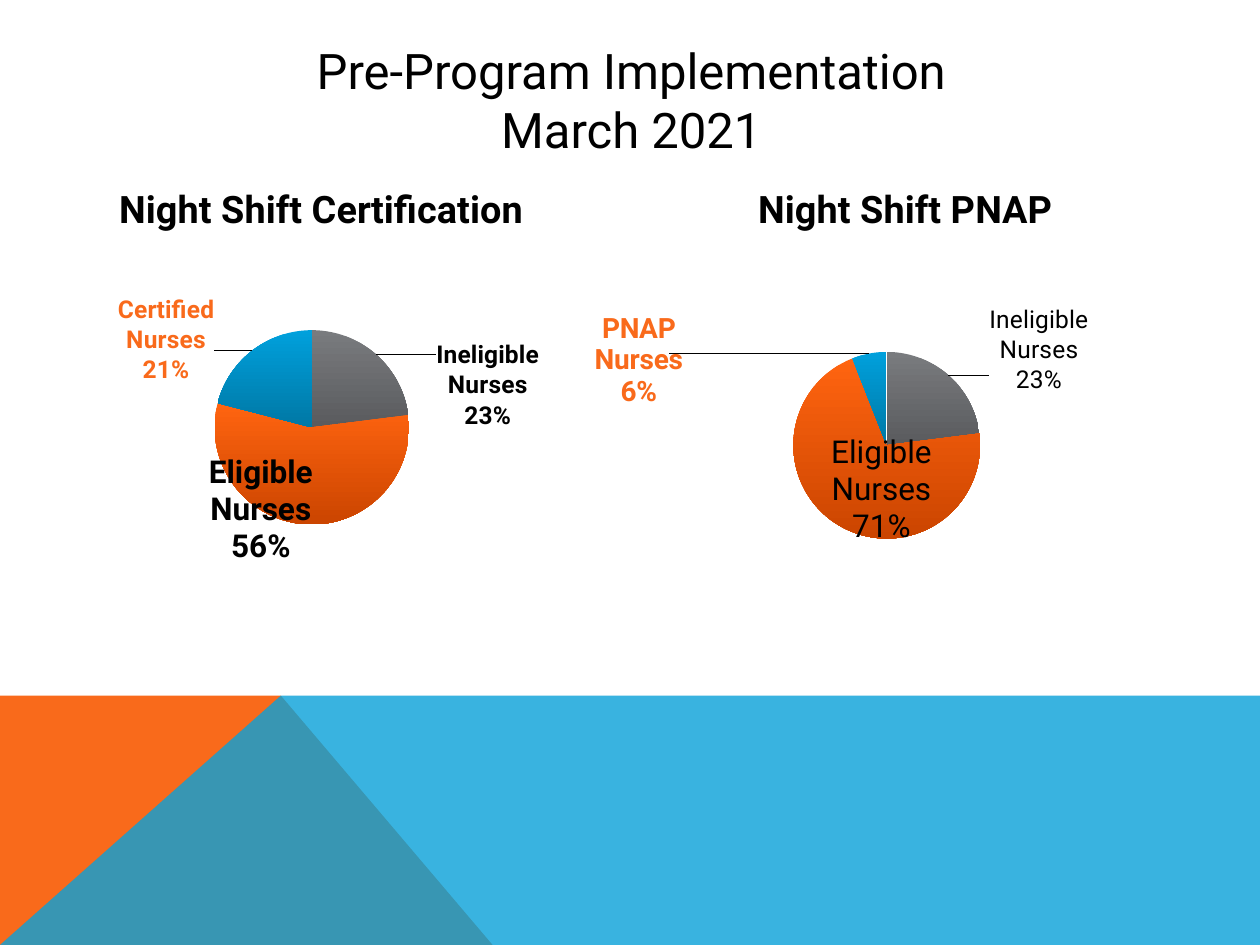
import pptx
import pptx.chart.data
import pptx.dml.color
import pptx.enum.chart
import pptx.enum.text
import pptx.oxml
import pptx.oxml.ns
import pptx.util

Pt = pptx.util.Pt
qn = pptx.oxml.ns.qn
FONT = "Roboto"
COLORS = {
    "text": "000000",
    "gray": "797B7E", "gray_dark": "5A5B5E",
    "orange": "F96A1B", "orange_light": "FF6410", "orange_dark": "CB4500",
    "blue": "08A1D9", "blue_light": "00A0DC", "blue_dark": "0078A5",
}
# Top and bottom colour of each slice
SLICES = [("gray", "gray_dark"), ("orange_light", "orange_dark"), ("blue_light", "blue_dark")]
# Labels show category and percentage on separate lines
SHOWN = (
    '<c:showLegendKey val="0"/><c:showVal val="0"/><c:showCatName val="1"/>'
    '<c:showSerName val="0"/><c:showPercent val="1"/><c:showBubbleSize val="0"/>'
    "<c:separator>\n</c:separator>"
)
LEADERS = (
    '<c:showLeaderLines val="1"/><c:leaderLines><c:spPr><a:ln w="9525"><a:solidFill>'
    f'<a:srgbClr val="{COLORS["text"]}"/></a:solidFill></a:ln></c:spPr></c:leaderLines>'
)


def rgb(name):
    return pptx.dml.color.RGBColor.from_string(COLORS[name])


def apply(target, values):
    for attribute, value in values.items():
        setattr(target, attribute, value)


def element(tag, body="", attributes=""):
    namespaces = pptx.oxml.ns.nsdecls("c", "a")
    return pptx.oxml.parse_xml(f"<{tag} {namespaces} {attributes}>{body}</{tag}>")


def manual_layout(edges=True, target="", **fractions):
    """Content of a layout, from fractions of the chart's size."""
    modes = '<c:xMode val="edge"/><c:yMode val="edge"/>' if edges else ""
    values = "".join(f'<c:{key} val="{value}"/>' for key, value in fractions.items())
    return f"<c:manualLayout>{target}{modes}{values}</c:manualLayout>"


def label_xml(index, dx, dy, size, bold, color):
    """Label of one slice, moved by dx, dy from its place outside the pie."""
    return (
        f'<c:dLbl><c:idx val="{index}"/><c:layout>{manual_layout(False, x=dx, y=dy)}</c:layout>'
        '<c:numFmt formatCode="0%" sourceLinked="0"/><c:spPr><a:noFill/></c:spPr>'
        f'<c:txPr><a:bodyPr/><a:p><a:pPr><a:defRPr sz="{size * 100}" b="{bold}">'
        f'<a:solidFill><a:srgbClr val="{COLORS[color]}"/></a:solidFill>'
        f'<a:latin typeface="{FONT}"/></a:defRPr></a:pPr><a:endParaRPr/></a:p></c:txPr>'
        f'<c:dLblPos val="outEnd"/>{SHOWN}</c:dLbl>'
    )


def add_band(slide, left, top, width, height):
    """Orange wedge with a translucent blue band over it."""
    right, bottom = left + width, top + height
    peak = left + 160.5
    outlines = [
        ("orange", [(left, bottom), (left, top), (peak, top), (left + 281.5, bottom)]),
        ("blue", [(left, bottom), (peak, top), (right, top), (right, bottom)]),
    ]
    for color, points in outlines:
        start, *rest = [(Pt(x), Pt(y)) for x, y in points]
        builder = slide.shapes.build_freeform(*start)
        builder.add_line_segments(rest, close=True)
        panel = builder.convert_to_shape()
        panel.shadow.inherit = False
        panel.fill.solid()
        panel.fill.fore_color.rgb = rgb(color)
        panel.line.fill.background()
    # The last panel is the translucent one
    tint = panel._element.spPr.find(qn("a:solidFill"))[0]
    tint.append(element("a:alpha", attributes='val="80000"'))


def add_heading(slide, left, top, width, height):
    frame = slide.shapes.add_textbox(Pt(left), Pt(top), Pt(width), Pt(height)).text_frame
    apply(frame, {
        "word_wrap": True, "margin_top": Pt(13), "margin_bottom": 0,
        "vertical_anchor": pptx.enum.text.MSO_ANCHOR.MIDDLE,
        "text": "Pre-Program Implementation\nMarch 2021",
    })
    for line in frame.paragraphs:
        line.alignment = pptx.enum.text.PP_ALIGN.CENTER
        apply(line.font, {"name": FONT, "size": Pt(28)})
        line.font.color.rgb = rgb("text")


def add_shift_pie(slide, left, top, width, height, title, shares, title_at, pie_at, labels):
    shift = pptx.chart.data.CategoryChartData(number_format="0")
    shift.categories = list(shares)
    shift.add_series(title, list(shares.values()))
    chart = slide.shapes.add_chart(
        pptx.enum.chart.XL_CHART_TYPE.PIE,
        Pt(left), Pt(top), Pt(width), Pt(height), shift).chart
    apply(chart, {"has_legend": False, "has_title": True})
    apply(chart.font, {"name": FONT, "size": Pt(18)})
    chart.font.color.rgb = rgb("text")

    # Title
    caption = chart.chart_title.text_frame
    caption.text = title
    font = caption.paragraphs[0].runs[0].font
    apply(font, {"name": FONT, "size": Pt(21.6), "bold": True})
    font.color.rgb = rgb("text")

    # Places of the title and the pie
    heading = chart.chart_title._element
    area = chart._chartSpace.chart.plotArea
    for part in (heading, area):
        for old in part.findall(qn("c:layout")):
            part.remove(old)
    x, y = title_at
    heading.find(qn("c:tx")).addnext(element("c:layout", manual_layout(x=x, y=y)))
    x, y, w, h = pie_at
    inner = '<c:layoutTarget val="inner"/>'
    area.insert(0, element("c:layout", manual_layout(target=inner, x=x, y=y, w=w, h=h)))

    # Slices
    plot = chart.plots[0]
    plot.vary_by_categories = True
    nurses = plot.series[0]
    for index, shades in enumerate(SLICES):
        slice_format = nurses.points[index].format
        slice_format.fill.gradient()
        slice_format.fill.gradient_angle = 270
        for stop, shade in zip(slice_format.fill.gradient_stops, shades):
            stop.color.rgb = rgb(shade)
        slice_format.line.fill.background()

    # Labels with leader lines
    parts = "".join(label_xml(index, *label) for index, label in enumerate(labels))
    nurses._element.find(qn("c:cat")).addprevious(
        element("c:dLbls", parts + SHOWN + LEADERS))


def main():
    deck = pptx.Presentation()
    apply(deck, {"slide_width": Pt(720), "slide_height": Pt(540)})
    slide = deck.slides.add_slide(deck.slide_layouts[6])
    add_band(slide, 0, 397.5, 720, 142.5)
    add_shift_pie(
        slide, 23, 86.4, 316.8, 292.3, "Night Shift Certification",
        {"Ineligible Nurses": 23, "Eligible Nurses": 56, "Certified Nurses": 21},
        title_at=(0.13, 0.05), pie_at=(0.31, 0.35, 0.36, 0.38),
        labels=[(0.1, 0.16, 14, 1, "text"), (-0.08, -0.15, 18, 1, "text"),
                (-0.06, 0.08, 14, 1, "orange")])
    add_shift_pie(
        slide, 339.8, 86.4, 344.2, 292.3, "Night Shift PNAP",
        {"Ineligible Nurses": 23, "Eligible Nurses": 71, "PNAP Nurses": 6},
        title_at=(0.26, 0.05), pie_at=(0.33, 0.39, 0.31, 0.37),
        labels=[(0.06, 0.05, 14, 0, "text"), (0.16, -0.19, 18, 0, "text"),
                (-0.33, 0.12, 16, 1, "orange")])
    add_heading(slide, 64.8, 28.8, 591.8, 43.2)
    deck.save("out.pptx")


if __name__ == "__main__":
    main()
